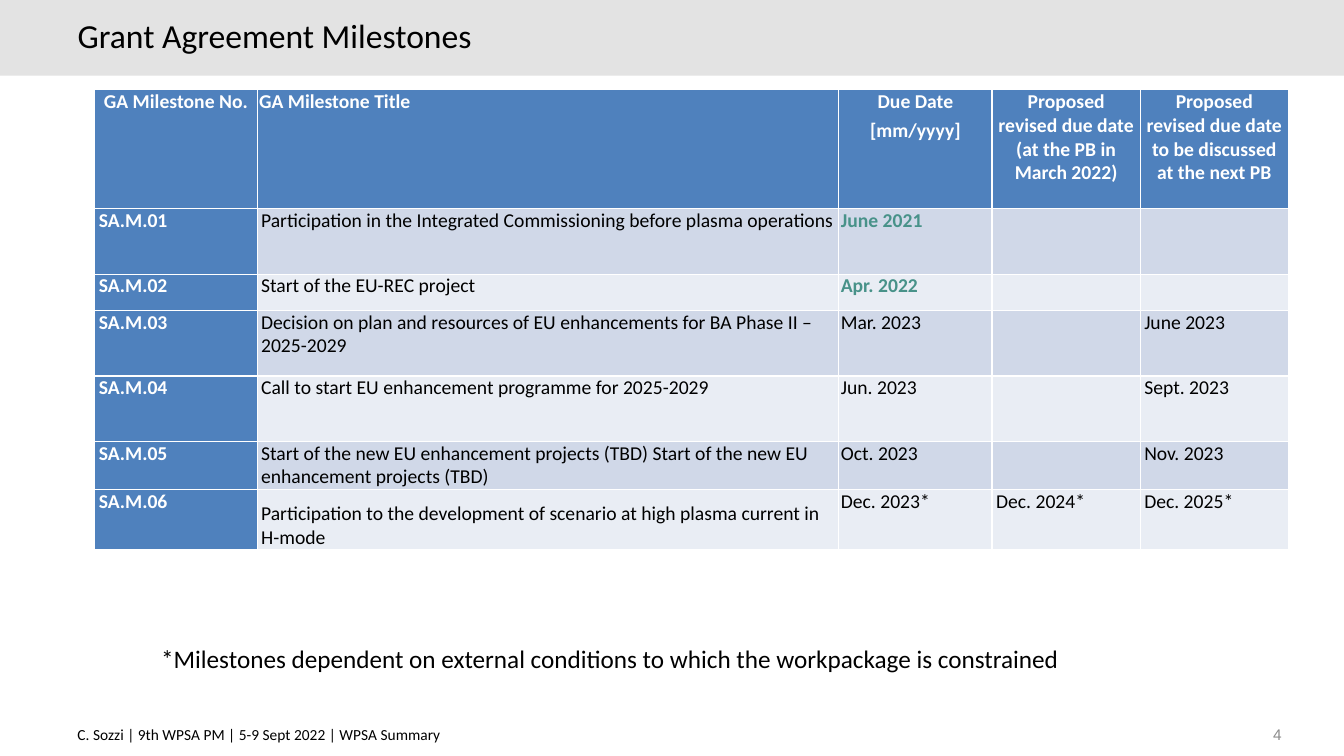
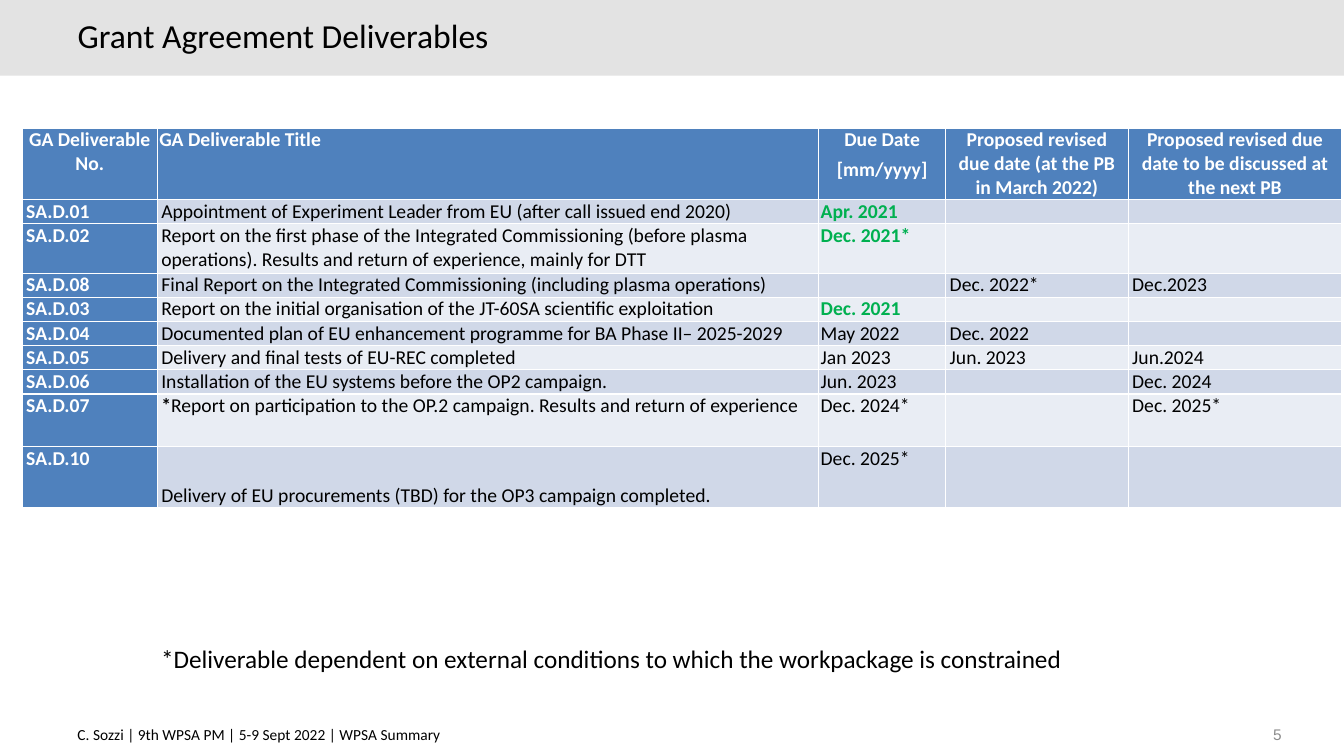
from lxml.etree import SubElement
from pptx import Presentation
from pptx.dml.color import RGBColor
from pptx.enum.shapes import MSO_SHAPE
from pptx.enum.text import MSO_ANCHOR, MSO_AUTO_SIZE, PP_ALIGN
from pptx.oxml.ns import qn
from pptx.util import Inches, Pt

COLOURS = {
    "band": "E3E3E3", "head": "4F81BD", "odd": "D0D8E8", "even": "E9EDF4",
    "text": "000000", "white": "FFFFFF", "number": "8C8C8C",
    "teal": "489289", "green": "00B050",
}
FOOTER = "C. Sozzi | 9th WPSA PM | 5-9 Sept 2022 | WPSA Summary"
FIRST_NUMBER = 4
DATE_HEADINGS = [
    "Due Date\n[mm/yyyy]",
    "Proposed revised due date (at the PB in March 2022)",
    "Proposed revised due date to be discussed at the next PB",
]
BOTTOM_TITLES = {"SA.M.06", "SA.D.10"}

PAGES = [
    {
        "title": "Grant Agreement Milestones",
        "kind": "GA Milestone",
        "origin": (0.94, 0.89),
        "columns": [1.61, 5.77, 1.52, 1.47, 1.47],
        "heights": [1.18, 0.65, 0.36, 0.65, 0.65, 0.48, 0.59],
        "done": {"SA.M.01", "SA.M.02"},
        "done_colour": "teal",
        "rows": [
            ("SA.M.01", "Participation in the Integrated Commissioning before plasma operations", "June 2021", "", ""),
            ("SA.M.02", "Start of the EU-REC project", "Apr. 2022", "", ""),
            ("SA.M.03", "Decision on plan and resources of EU enhancements for BA Phase II – 2025-2029",
             "Mar. 2023", "", "June 2023"),
            ("SA.M.04", "Call to start EU enhancement programme for 2025-2029", "Jun. 2023", "", "Sept. 2023"),
            ("SA.M.05", "Start of the new EU enhancement projects (TBD) Start of the new EU enhancement projects (TBD)",
             "Oct. 2023", "", "Nov. 2023"),
            ("SA.M.06", "Participation to the development of scenario at high plasma current in H-mode",
             "Dec. 2023*", "Dec. 2024*", "Dec. 2025*"),
        ],
        "note": "*Milestones dependent on external conditions to which the workpackage is constrained",
    },
    {
        "title": "Grant Agreement Deliverables",
        "kind": "GA Deliverable",
        "origin": (0.22, 1.27),
        "columns": [1.34, 6.56, 1.26, 1.81, 2.12],
        "heights": [0.71, 0.24, 0.49] + [0.24] * 5 + [0.52, 0.61],
        "done": {"SA.D.01", "SA.D.02", "SA.D.03"},
        "done_colour": "green",
        "rows": [
            ("SA.D.01", "Appointment of Experiment Leader from EU (after call issued end 2020)", "Apr. 2021", "", ""),
            ("SA.D.02", "Report on the first phase of the Integrated Commissioning (before plasma operations). "
             "Results and return of experience, mainly for DTT", "Dec. 2021*", "", ""),
            ("SA.D.08", "Final Report on the Integrated Commissioning (including plasma operations)",
             "", "Dec. 2022*", "Dec.2023"),
            ("SA.D.03", "Report on the initial organisation of the JT-60SA scientific exploitation", "Dec. 2021", "", ""),
            ("SA.D.04", "Documented plan of EU enhancement programme for BA Phase II– 2025-2029",
             "May 2022", "Dec. 2022", ""),
            ("SA.D.05", "Delivery and final tests of EU-REC completed", "Jan 2023", "Jun. 2023", "Jun.2024"),
            ("SA.D.06", "Installation of the EU systems before the OP2 campaign.", "Jun. 2023", "", "Dec. 2024"),
            ("SA.D.07", "*Report on participation to the OP.2 campaign. Results and return of experience",
             "Dec. 2024*", "", "Dec. 2025*"),
            ("SA.D.10", "Delivery of EU procurements (TBD) for the OP3 campaign completed.", "Dec. 2025*", "", ""),
        ],
        "note": "*Deliverable dependent on external conditions to which the workpackage is constrained",
    },
]


def rgb(name):
    return RGBColor.from_string(COLOURS[name])


def write(frame, text, size=14, colour="text", bold=False, font="Calibri",
          align=PP_ALIGN.LEFT, gap=0, line=None, bold_lead=0):
    for index, content in enumerate(text.split("\n")):
        paragraph = frame.paragraphs[0] if index == 0 else frame.add_paragraph()
        paragraph.alignment = align
        if index:
            paragraph.space_before = Pt(gap)
        if line:
            paragraph.line_spacing = Pt(line)
        for part, strong in ((content[:bold_lead], True), (content[bold_lead:], bold)):
            if part:
                run = paragraph.add_run()
                run.text = part
                run.font.size = Pt(size)
                run.font.name = font
                run.font.bold = strong
                run.font.color.rgb = rgb(colour)
        if not content:
            SubElement(paragraph._p, qn("a:endParaRPr"), sz=str(size * 100))


def add_label(slide, box, text, wrap=True, **style):
    frame = slide.shapes.add_textbox(*map(Inches, box)).text_frame
    frame.word_wrap = wrap
    write(frame, text, **style)


def fill_cell(cell, text, fill, left=0.04, right=0.02, anchor=MSO_ANCHOR.TOP, **style):
    cell.fill.solid()
    cell.fill.fore_color.rgb = rgb(fill)
    cell.margin_left, cell.margin_right = Inches(left), Inches(right)
    cell.margin_top = cell.margin_bottom = 0
    cell.vertical_anchor = anchor
    write(cell.text_frame, text, **style)


def add_schedule(slide, page):
    columns, heights = page["columns"], page["heights"]
    size = (sum(columns), sum(heights))
    table = slide.shapes.add_table(len(heights), len(columns),
                                   *map(Inches, page["origin"] + size)).table
    for column, width in zip(table.columns, columns):
        column.width = Inches(width)
    for row, height in zip(table.rows, heights):
        row.height = Inches(height)

    headings = [page["kind"] + " No.", page["kind"] + " Title"] + DATE_HEADINGS
    for index, heading in enumerate(headings):
        inset = 0.04 if index > 2 else 0.02
        fill_cell(table.cell(0, index), heading, "head", left=inset, right=inset,
                  colour="white", bold=True, gap=4,
                  align=PP_ALIGN.LEFT if index == 1 else PP_ALIGN.CENTER)

    for number, (code, title, due, *revised) in enumerate(page["rows"], 1):
        cells = table.rows[number].cells
        band = "odd" if number % 2 else "even"
        done = code in page["done"]
        fill_cell(cells[0], code, "head", colour="white", bold=True)
        fill_cell(cells[1], title, band, bold_lead=int(title.startswith("*")),
                  anchor=MSO_ANCHOR.BOTTOM if code in BOTTOM_TITLES else MSO_ANCHOR.TOP)
        fill_cell(cells[2], due, band, left=0.02, bold=done,
                  colour=page["done_colour"] if done else "text")
        for index, date in enumerate(revised, 3):
            fill_cell(cells[index], date, band, right=0.04)


def add_band(slide, layout, width):
    band = slide.shapes.add_shape(MSO_SHAPE.RECTANGLE, 0, 0, width, Inches(0.75))
    band.shadow.inherit = False
    band.fill.solid()
    band.fill.fore_color.rgb = rgb("band")
    band.line.fill.background()
    layout.shapes._spTree.insert(2, band._element)


def main():
    deck = Presentation()
    deck.slide_width, deck.slide_height = Inches(13.33), Inches(7.5)
    layout = deck.slide_layouts[5]
    heading = layout.placeholders[0]
    heading.left, heading.top, heading.width, heading.height = map(Inches, (0.67, 0.13, 11, 0.5))

    for number, page in enumerate(PAGES, FIRST_NUMBER):
        slide = deck.slides.add_slide(layout)
        if number == FIRST_NUMBER:
            add_band(slide, layout, deck.slide_width)
        title = slide.shapes.title.text_frame
        title.auto_size = MSO_AUTO_SIZE.NONE
        title.vertical_anchor = MSO_ANCHOR.MIDDLE
        write(title, page["title"], size=24, line=24)
        add_schedule(slide, page)
        add_label(slide, (0.67, 7.14, 4.27, 0.36), FOOTER, size=11)
        add_label(slide, (12.02, 7.14, 0.79, 0.22), str(number), size=11, font="Arial",
                  colour="number", align=PP_ALIGN.RIGHT)
        add_label(slide, (1.5, 6.33, 9.3, 0.4), page["note"], wrap=False, size=18)

    deck.save("out.pptx")


if __name__ == "__main__":
    main()
